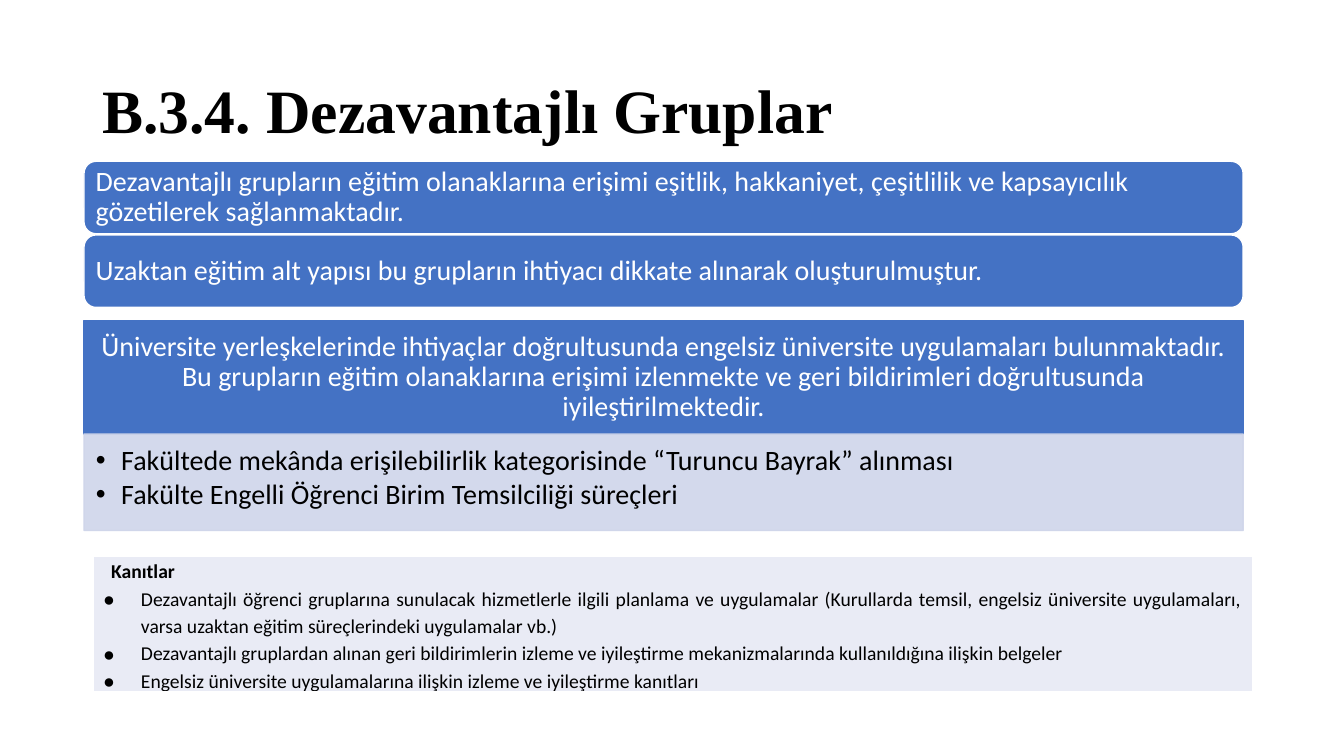
"""Build the slide on disadvantaged groups."""
from lxml import etree
from pptx import Presentation
from pptx.dml.color import RGBColor
from pptx.enum.shapes import MSO_SHAPE
from pptx.enum.text import MSO_ANCHOR, PP_ALIGN
from pptx.oxml.ns import qn
from pptx.util import Pt

RECT, ROUND = MSO_SHAPE.RECTANGLE, MSO_SHAPE.ROUNDED_RECTANGLE
TOP, MIDDLE = MSO_ANCHOR.TOP, MSO_ANCHOR.MIDDLE
LEFT, CENTER, JUSTIFY = PP_ALIGN.LEFT, PP_ALIGN.CENTER, PP_ALIGN.JUSTIFY
BLUE, PALE, WHITE, BLACK = "4472C4", "CFD5EA", "FFFFFF", "000000"


def rgb(value):
    return RGBColor.from_string(value)


def write(tf, texts, size, color, align=LEFT, spacing=0.9, after=0,
          font="Calibri", bold=False, bullet=None, indent=0):
    for i, text in enumerate(texts):
        p = tf.paragraphs[0] if i == 0 and not tf.text else tf.add_paragraph()
        p.alignment, p.line_spacing, p.space_after = align, spacing, Pt(after)
        r = p.add_run()
        r.text = text
        for name, value in {"size": Pt(size), "name": font, "bold": bold}.items():
            setattr(r.font, name, value)
        r.font.color.rgb = rgb(color)
        pPr = p._p.get_or_add_pPr()
        pPr.set("marL", str(Pt(indent)))
        if bullet:
            pPr.set("indent", str(-Pt(indent)))
            etree.SubElement(pPr, qn("a:buFont"), typeface="Arial")
            etree.SubElement(pPr, qn("a:buChar"), char=bullet)


prs = Presentation()
prs.slide_width, prs.slide_height = Pt(960), Pt(540)
s = prs.slides.add_slide(prs.slide_layouts[6])

title = s.shapes.add_textbox(Pt(66), Pt(28.75), Pt(828), Pt(104.4))
tf = title.text_frame
tf.word_wrap, tf.vertical_anchor = True, MIDDLE
write(tf, ["B.3.4. Dezavantajlı Gruplar"], 44, BLACK, font="Times New Roman", bold=True)

bar = {"size": 20, "color": WHITE, "after": 7}
panels = [
    (ROUND, 115.2, 51.8, BLUE, WHITE, MIDDLE, (5.8, 5.8, 5.8, 5.8), bar,
     ["Dezavantajlı grupların eğitim olanaklarına erişimi eşitlik, hakkaniyet, "
      "çeşitlilik ve kapsayıcılık gözetilerek sağlanmaktadır."]),
    (ROUND, 167.8, 51.8, BLUE, WHITE, MIDDLE, (5.8, 5.8, 5.8, 5.8), bar,
     ["Uzaktan eğitim alt yapısı bu grupların ihtiyacı dikkate alınarak oluşturulmuştur."]),
    (RECT, 229, 81, BLUE, BLUE, MIDDLE, (11.5, 6.5, 11.5, 6.5), {**bar, "align": CENTER},
     ["Üniversite yerleşkelerinde ihtiyaçlar doğrultusunda engelsiz üniversite "
      "uygulamaları bulunmaktadır. Bu grupların eğitim olanaklarına erişimi izlenmekte "
      "ve geri bildirimleri doğrultusunda iyileştirilmektedir."]),
    (RECT, 310, 69, PALE, PALE, TOP, (8.6, 8.6, 11.5, 12.2),
     {"size": 20, "color": BLACK, "after": 3, "bullet": "•", "indent": 18},
     ["Fakültede mekânda erişilebilirlik kategorisinde “Turuncu Bayrak” alınması",
      "Fakülte Engelli Öğrenci Birim Temsilciliği süreçleri"]),
]
for kind, top, height, fill, line, anchor, insets, style, texts in panels:
    sp = s.shapes.add_shape(kind, Pt(60), Pt(top), Pt(828), Pt(height))
    sp.shadow.inherit = False
    sp.fill.solid()
    sp.fill.fore_color.rgb = rgb(fill)
    sp.line.color.rgb = rgb(line)
    sp.line.width = Pt(1)
    if fill == PALE:
        for clr in sp._element.spPr.iter(qn("a:srgbClr")):
            etree.SubElement(clr, qn("a:alpha"), val="90000")
    tf = sp.text_frame
    tf.word_wrap, tf.vertical_anchor = True, anchor
    for side, inset in zip(("left", "top", "right", "bottom"), insets):
        setattr(tf, f"margin_{side}", Pt(inset))
    write(tf, texts, **style)

table = s.shapes.add_table(1, 1, Pt(66.5), Pt(397.5), Pt(828), Pt(96)).table
table.first_row = table.horz_banding = False
cell = table.cell(0, 0)
cell.margin_top = cell.margin_bottom = 0
evidence = {"size": 14, "color": BLACK, "align": JUSTIFY, "spacing": 1.15}
write(cell.text_frame, ["Kanıtlar"], **evidence, bold=True, indent=5.7)
write(cell.text_frame, [
    "Dezavantajlı öğrenci gruplarına sunulacak hizmetlerle ilgili planlama ve uygulamalar "
    "(Kurullarda temsil, engelsiz üniversite uygulamaları, varsa uzaktan eğitim "
    "süreçlerindeki uygulamalar vb.)",
    "Dezavantajlı gruplardan alınan geri bildirimlerin izleme ve iyileştirme "
    "mekanizmalarında kullanıldığına ilişkin belgeler",
    "Engelsiz üniversite uygulamalarına ilişkin izleme ve iyileştirme kanıtları",
], **evidence, bullet="●", indent=27)
tcPr = cell._tc.get_or_add_tcPr()
for edge in ("lnL", "lnR", "lnT", "lnB"):
    ln = etree.SubElement(tcPr, qn(f"a:{edge}"), w=str(Pt(1)))
    etree.SubElement(etree.SubElement(ln, qn("a:solidFill")), qn("a:srgbClr"), val=WHITE)
cell.fill.solid()
cell.fill.fore_color.rgb = rgb("E9EBF5")

prs.save("out.pptx")
